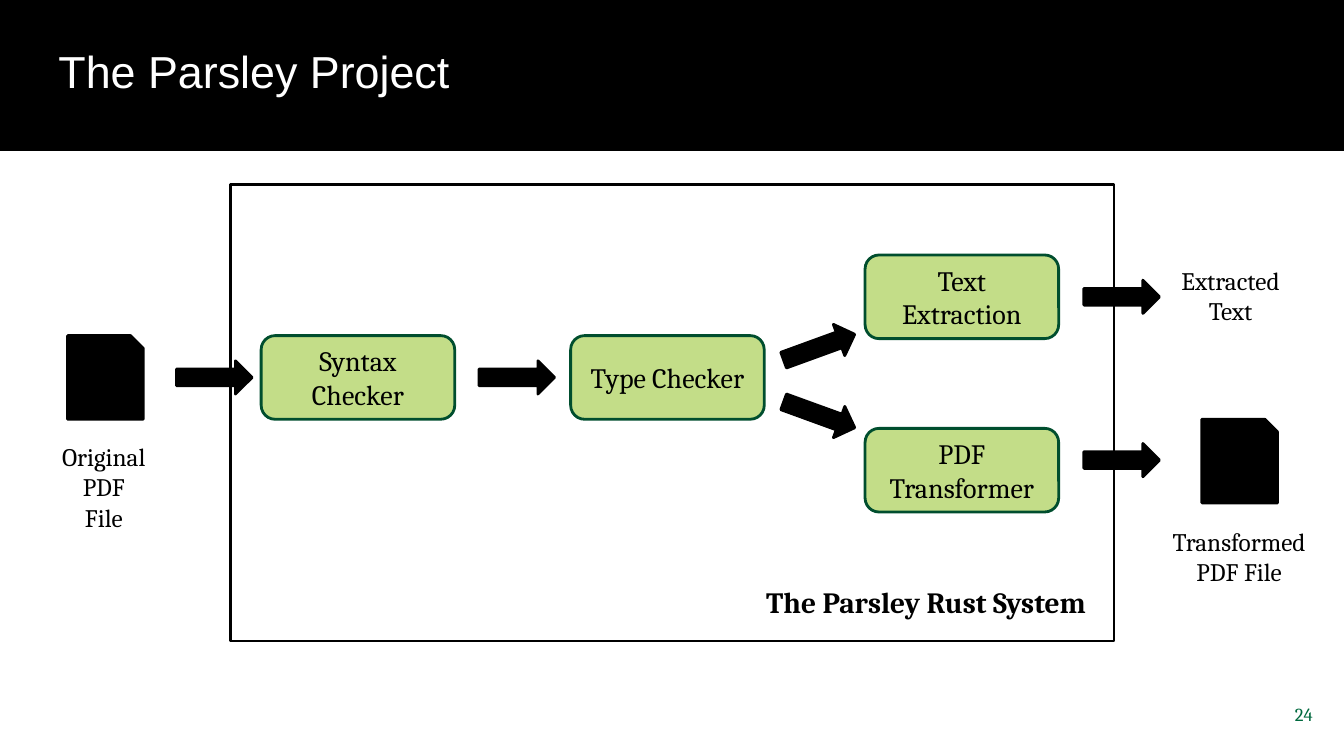
from pptx import Presentation
from pptx.dml.color import RGBColor
from pptx.enum.shapes import MSO_SHAPE
from pptx.enum.text import MSO_ANCHOR, MSO_AUTO_SIZE, PP_ALIGN
from pptx.util import Inches, Pt

COLORS = {"black": "000000", "white": "FFFFFF", "box": "C3DD88",
          "edge": "004E2E", "number": "00693E"}
BOX_W, BOX_H = 1.92, 0.83
FILE_W, FILE_H = 0.75, 0.83
ARROW_W, ARROW_H = 0.75, 0.33


def color(name):
    return RGBColor.from_string(COLORS[name])


def write(tf, lines, size, ink="black", font="Cambria", bold=False,
          align=PP_ALIGN.CENTER, spacing=None, **frame):
    """Fill a text frame, one paragraph per line."""
    for name, value in frame.items():
        setattr(tf, name, value)
    for i, line in enumerate(lines):
        p = tf.paragraphs[0] if i == 0 else tf.add_paragraph()
        p.alignment = align
        if spacing:
            p.line_spacing = spacing
        r = p.add_run()
        r.text = line
        for name, value in {"size": Pt(size), "name": font, "bold": bold}.items():
            setattr(r.font, name, value)
        r.font.color.rgb = color(ink)


def margins(inches):
    sides = ("left", "top", "right", "bottom")
    return {f"margin_{side}": Inches(inches) for side in sides}


def add_shape(s, kind, x, y, w, h, fill="black", line="black"):
    sp = s.shapes.add_shape(kind, Inches(x), Inches(y), Inches(w), Inches(h))
    sp.shadow.inherit = False
    if fill:
        sp.fill.solid()
        sp.fill.fore_color.rgb = color(fill)
    else:
        sp.fill.background()
    sp.line.color.rgb = color(line)
    sp.line.width = Pt(2)
    return sp


def add_step(s, text, x, y):
    sp = add_shape(s, MSO_SHAPE.ROUNDED_RECTANGLE, x, y, BOX_W, BOX_H, "box", "edge")
    write(sp.text_frame, [text], 20, word_wrap=True,
          vertical_anchor=MSO_ANCHOR.MIDDLE)


def add_file(s, x, y):
    add_shape(s, MSO_SHAPE.SNIP_1_RECTANGLE, x, y, FILE_W, FILE_H)


def add_arrow(s, x, y, angle=0):
    sp = add_shape(s, MSO_SHAPE.RIGHT_ARROW, x, y, ARROW_W, ARROW_H)
    sp.rotation = angle


def add_label(s, lines, x, y, w, h, size=18, **style):
    tb = s.shapes.add_textbox(Inches(x), Inches(y), Inches(w), Inches(h))
    write(tb.text_frame, lines, size, **style)


def add_header(s, text):
    band = add_shape(s, MSO_SHAPE.RECTANGLE, 0, -0.03, 13.33, 1.51)
    title = s.shapes.title
    title.element.addprevious(band.element)  # band lies behind the title
    place = {"left": 0.45, "top": 0.39, "width": 12.42, "height": 0.84}
    for name, value in place.items():
        setattr(title, name, Inches(value))
    write(title.text_frame, [text], 32, "white", "Arial", align=PP_ALIGN.LEFT,
          spacing=0.85, word_wrap=True, auto_size=MSO_AUTO_SIZE.NONE,
          vertical_anchor=MSO_ANCHOR.TOP, **margins(0.13))


def main():
    prs = Presentation()
    prs.slide_width, prs.slide_height = Inches(13.33), Inches(7.5)
    s = prs.slides.add_slide(prs.slide_layouts[5])

    # Header and slide number
    add_header(s, "The Parsley Project")
    add_label(s, ["24"], 12.35, 6.8, 0.8, 0.57, 13.2, ink="number",
              align=PP_ALIGN.RIGHT, word_wrap=True,
              vertical_anchor=MSO_ANCHOR.MIDDLE, **margins(0.13))

    # Files and processing steps
    add_file(s, 0.67, 3.33)
    for text, x, y in [("Syntax Checker", 2.59, 3.33),
                       ("Type Checker", 5.66, 3.33),
                       ("Text Extraction", 8.58, 2.53),
                       ("PDF Transformer", 8.58, 4.25)]:
        add_step(s, text, x, y)
    add_file(s, 11.92, 4.16)

    # System frame
    frame = add_shape(s, MSO_SHAPE.ROUNDED_RECTANGLE, 2.29, 1.83, 8.76, 4.53, None)
    frame.adjustments[0] = 0
    add_label(s, ["The Parsley Rust System"], 7.5, 5.75, 3.68, 0.45, 21,
              bold=True, align=PP_ALIGN.LEFT, word_wrap=True,
              auto_size=MSO_AUTO_SIZE.SHAPE_TO_FIT_TEXT)

    # Flow arrows
    for x, y, angle in [(1.75, 3.58, 0), (4.75, 3.58, 0),
                        (7.75, 3.95, 20), (7.75, 3.28, -20),
                        (10.75, 2.78, 0), (10.75, 4.4, 0)]:
        add_arrow(s, x, y, angle)

    # Input and output labels
    for lines, x, y, w, h in [
            (["Original", "PDF", "File"], 0.5, 4.33, 1.06, 1.01),
            (["Transformed", "PDF File"], 11.49, 5.17, 1.6, 0.7),
            (["Extracted", "Text"], 11.59, 2.58, 1.23, 0.7)]:
        add_label(s, lines, x, y, w, h, word_wrap=False,
                  auto_size=MSO_AUTO_SIZE.SHAPE_TO_FIT_TEXT)

    prs.save("out.pptx")


if __name__ == "__main__":
    main()
